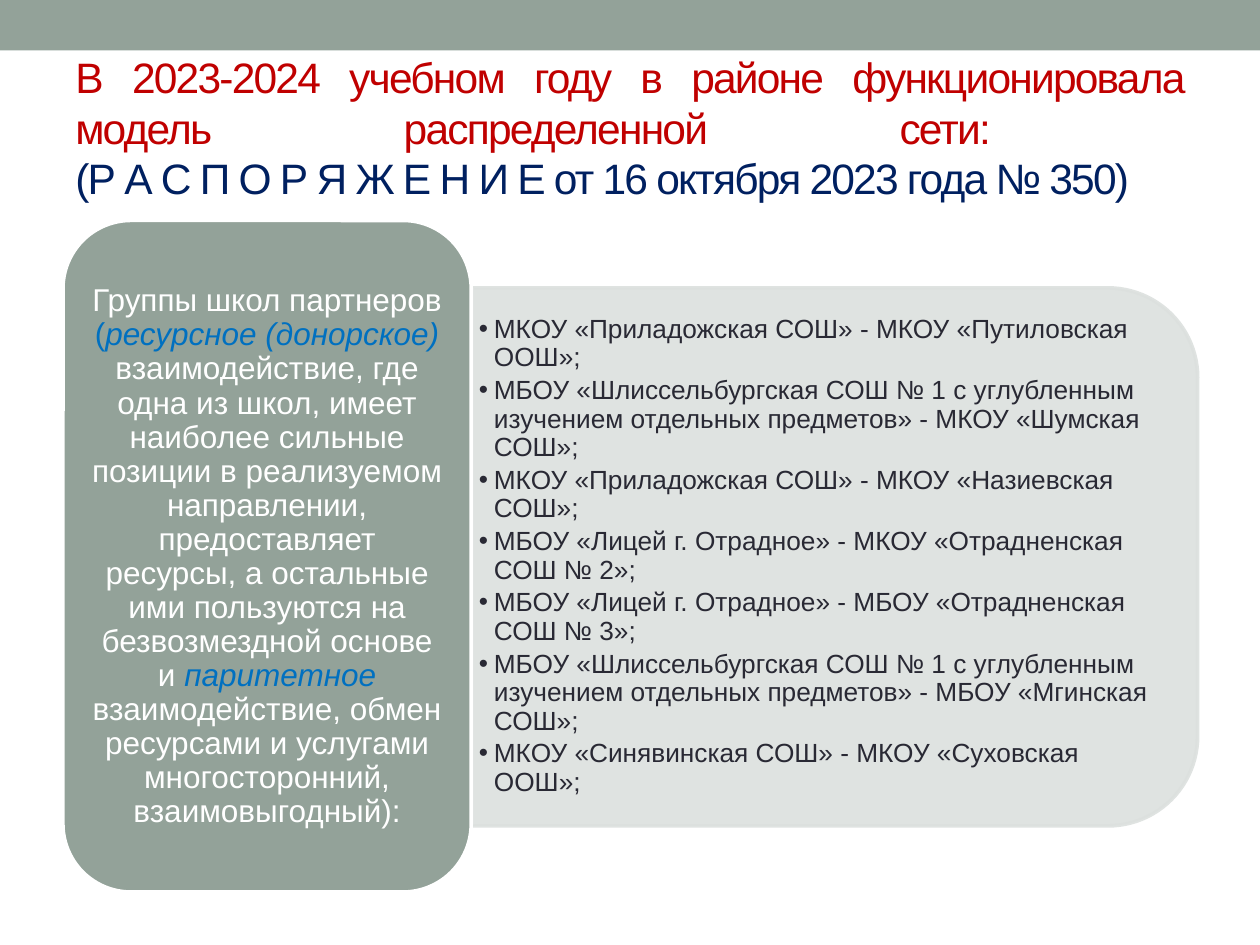
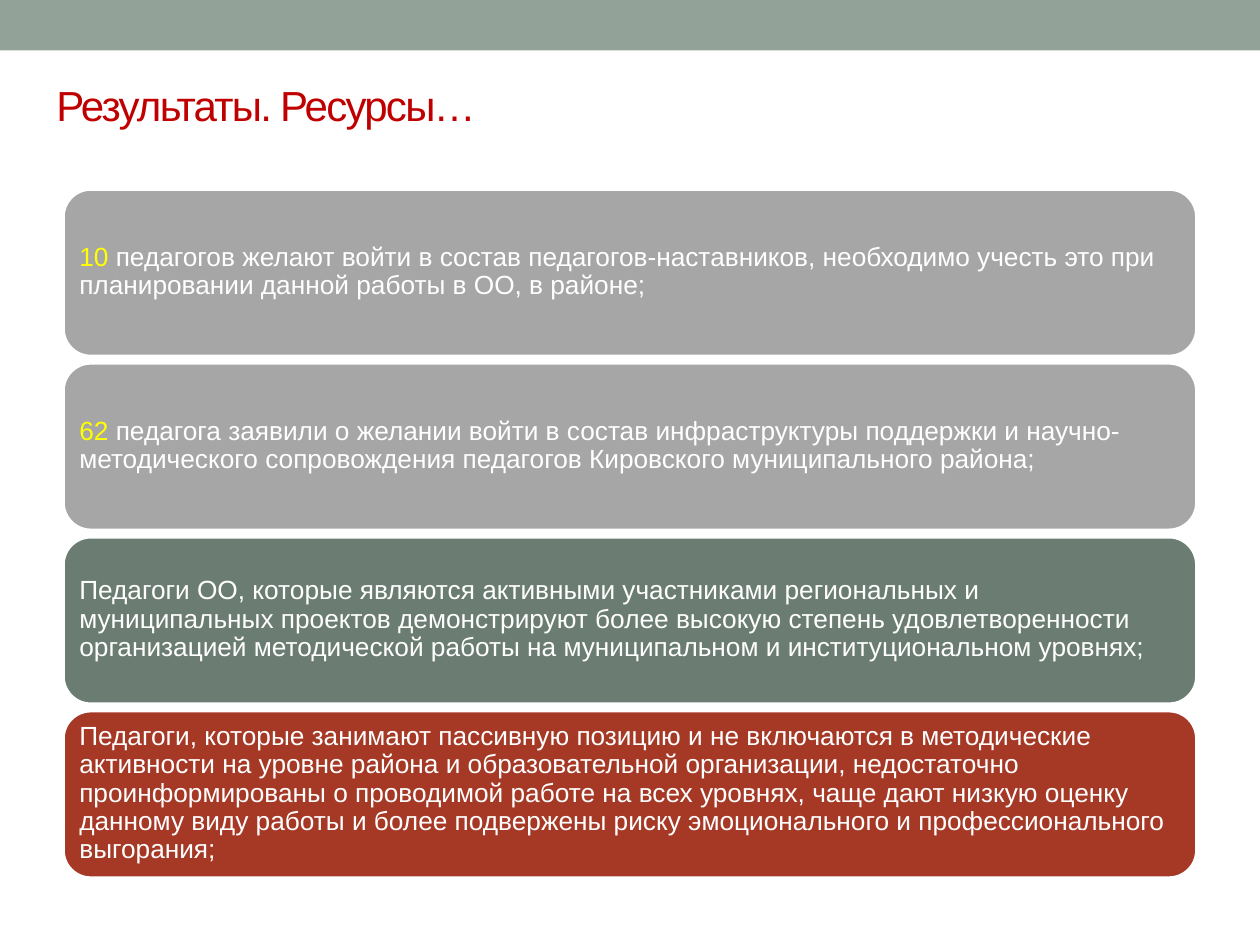
from lxml import etree
from pptx import Presentation
from pptx.dml.color import RGBColor
from pptx.enum.shapes import MSO_SHAPE as Shape
from pptx.enum.text import MSO_ANCHOR as Anchor, PP_ALIGN as Align
from pptx.oxml.ns import qn
from pptx.util import Inches, Pt

FONT = "Arial"
SAGE, PALE, GREY, GREEN, BRICK = "93A299", "DCE0DE", "A6A6A6", "6B7D72", "A53926"
WHITE, INK, RED, NAVY, BLUE, YELLOW = "FFFFFF", "292934", "C00000", "002060", "0070C0", "FFFF00"

MODEL_TITLE = [
    ("В 2023-2024 учебном году в районе функционировала модель распределенной сети: ", RED),
    ("\n", RED),
    ("(Р А С П О Р Я Ж Е Н И Е от 16 октября 2023 года № 350)", NAVY),
]
RESULTS_TITLE = [("Результаты. Ресурсы…", RED)]

PARTNER_GROUPS = [
    ("Группы школ партнеров ", WHITE),
    ("(", BLUE),
    ("ресурсное (донорское) ", BLUE, True),
    ("взаимодействие, где одна из школ, имеет наиболее сильные позиции в реализуемом "
     "направлении, предоставляет ресурсы, а остальные ими пользуются на безвозмездной основе и ", WHITE),
    ("паритетное ", BLUE, True),
    ("взаимодействие, обмен ресурсами и услугами многосторонний, взаимовыгодный):", WHITE),
]
SCHOOL_PAIRS = [
    "МКОУ «Приладожская СОШ» - МКОУ «Путиловская ООШ»;",
    "МБОУ «Шлиссельбургская СОШ № 1 с углубленным изучением отдельных предметов» - МКОУ «Шумская СОШ»;",
    "МКОУ «Приладожская СОШ» - МКОУ «Назиевская СОШ»;",
    "МБОУ «Лицей г. Отрадное» - МКОУ «Отрадненская СОШ № 2»;",
    "МБОУ «Лицей г. Отрадное» - МБОУ «Отрадненская СОШ № 3»;",
    "МБОУ «Шлиссельбургская СОШ № 1 с углубленным изучением отдельных предметов» - МБОУ «Мгинская СОШ»;",
    "МКОУ «Синявинская СОШ» - МКОУ «Суховская ООШ»;",
]
RESULTS = [
    (GREY, [("10", YELLOW),
            (" педагогов желают войти в состав педагогов-наставников, необходимо учесть это при "
             "планировании данной работы в ОО, в районе;", WHITE)]),
    (GREY, [("62", YELLOW),
            (" педагога заявили о желании войти в состав инфраструктуры поддержки и "
             "научно-методического сопровождения педагогов Кировского муниципального района;", WHITE)]),
    (GREEN, [("Педагоги ОО, которые являются активными участниками региональных и муниципальных "
              "проектов демонстрируют более высокую степень удовлетворенности организацией "
              "методической работы на муниципальном и институциональном уровнях;", WHITE)]),
    (BRICK, [("Педагоги, которые занимают пассивную позицию и не включаются в методические "
              "активности на уровне района и образовательной организации, недостаточно "
              "проинформированы о проводимой работе на всех уровнях, чаще дают низкую оценку "
              "данному виду работы и более подвержены риску эмоционального и профессионального "
              "выгорания;", WHITE)]),
]
CARD_LEFT, CARD_TOP, CARD_WIDTH, CARD_HEIGHT, CARD_STEP = 0.5, 1.5, 9, 1.33, 1.38


def color(value):
    """Turn a hex string into a colour."""
    return RGBColor.from_string(value)


def add_panel(slide, kind, box, fill, line=None, rotation=0, opacity=100):
    """Draw a filled preset shape."""
    shape = slide.shapes.add_shape(kind, *map(Inches, box))
    shape.shadow.inherit = False
    shape.rotation = rotation
    shape.fill.solid()
    shape.fill.fore_color.rgb = color(fill)
    if line:
        shape.line.color.rgb = color(line)
        shape.line.width = Pt(2.08)
    else:
        shape.line.fill.background()
    if opacity < 100:
        for tint in shape.element.spPr.iter(qn("a:srgbClr")):
            etree.SubElement(tint, qn("a:alpha"), val=str(opacity * 1000))
    return shape


def add_bullet(paragraph, indent):
    """Give a paragraph a hanging round bullet."""
    properties = paragraph._p.get_or_add_pPr()
    properties.set("marL", str(Inches(indent)))
    properties.set("indent", str(-Inches(indent)))
    etree.SubElement(properties, qn("a:buFont"), typeface=FONT)
    etree.SubElement(properties, qn("a:buChar"), char="•")


def add_text(slide, box, paragraphs, size, align=Align.LEFT, margins=(0.06, 0.06),
             line_spacing=0.9, space_after=0, bullet_indent=0, tracking=0):
    """Write paragraphs of (text, colour, italic) runs in a text box."""
    frame = slide.shapes.add_textbox(*map(Inches, box)).text_frame
    frame.word_wrap = True
    frame.vertical_anchor = Anchor.MIDDLE
    frame.margin_left = frame.margin_right = Inches(margins[0])
    frame.margin_top = frame.margin_bottom = Inches(margins[1])
    for index, runs in enumerate(paragraphs):
        paragraph = frame.add_paragraph() if index else frame.paragraphs[0]
        paragraph.alignment = align
        paragraph.line_spacing = line_spacing
        paragraph.space_after = Pt(space_after)
        if bullet_indent:
            add_bullet(paragraph, bullet_indent)
        for text, tone, *italic in runs:
            if text == "\n":
                paragraph.add_line_break()
                continue
            run = paragraph.add_run()
            run.text = text
            run.font.name = FONT
            run.font.size = Pt(size)
            run.font.italic = bool(italic)
            run.font.color.rgb = color(tone)
            if tracking:
                run._r.get_or_add_rPr().set("spc", str(tracking * 100))


def add_titled_slide(presentation, title, box, size, line_spacing=1.0):
    """Add a blank slide with the top band and a title."""
    slide = presentation.slides.add_slide(presentation.slide_layouts[6])
    add_panel(slide, Shape.RECTANGLE, (0, 0, 10, 0.4), SAGE)
    add_text(slide, box, [title], size, align=Align.JUSTIFY, margins=(0.1, 0.05),
             line_spacing=line_spacing, tracking=-1)
    return slide


def build_model_slide(presentation):
    """Show the partner groups beside the list of school pairs."""
    slide = add_titled_slide(presentation, MODEL_TITLE, (0.5, 0.36, 9, 1.3), 24.3, Pt(29))
    add_panel(slide, Shape.ROUND_2_SAME_RECTANGLE, (4.49, 1.54, 4.27, 5.76), PALE,
              line=PALE, rotation=90, opacity=90)
    add_text(slide, (3.74, 2.49, 5.55, 3.85), [[(pair, INK)] for pair in SCHOOL_PAIRS], 15,
             margins=(0.06, 0.03), space_after=2.6, bullet_indent=0.12)
    add_panel(slide, Shape.ROUNDED_RECTANGLE, (0.5, 1.75, 3.24, 5.33), SAGE, line=WHITE)
    add_text(slide, (0.66, 1.91, 2.92, 5.02), [PARTNER_GROUPS], 18,
             align=Align.CENTER, margins=(0.07, 0.04))


def build_results_slide(presentation):
    """Stack the result cards."""
    slide = add_titled_slide(presentation, RESULTS_TITLE, (0.35, 0.29, 9, 1.08), 24)
    for index, (fill, runs) in enumerate(RESULTS):
        top = CARD_TOP + index * CARD_STEP
        add_panel(slide, Shape.ROUNDED_RECTANGLE, (CARD_LEFT, top, CARD_WIDTH, CARD_HEIGHT),
                  fill, line=WHITE)
        add_text(slide, (CARD_LEFT + 0.07, top + 0.06, CARD_WIDTH - 0.13, CARD_HEIGHT - 0.13),
                 [runs], 15)


def main():
    """Build and save the presentation."""
    presentation = Presentation()
    presentation.slide_width, presentation.slide_height = Inches(10), Inches(7.5)
    build_model_slide(presentation)
    build_results_slide(presentation)
    presentation.save("out.pptx")


if __name__ == "__main__":
    main()
